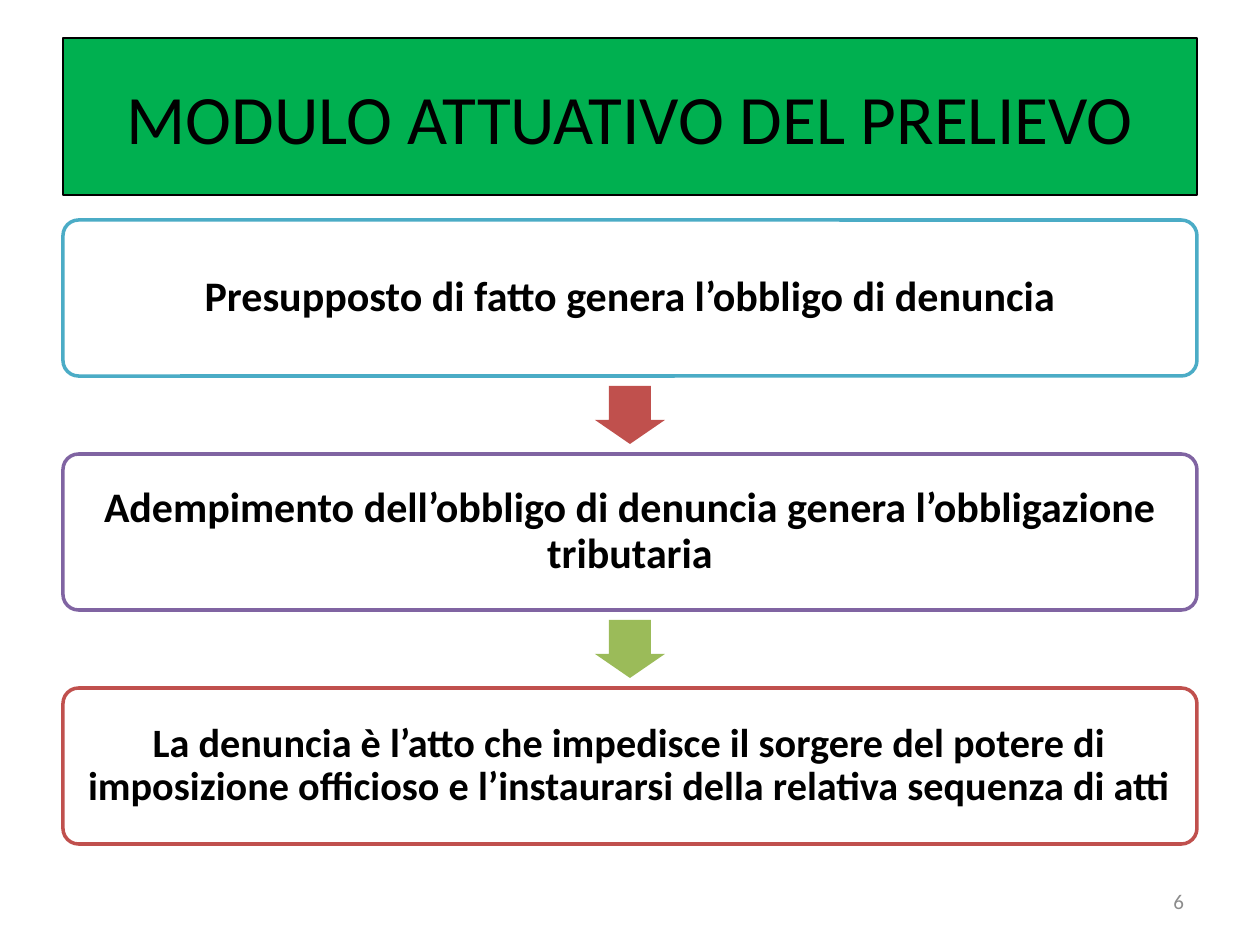
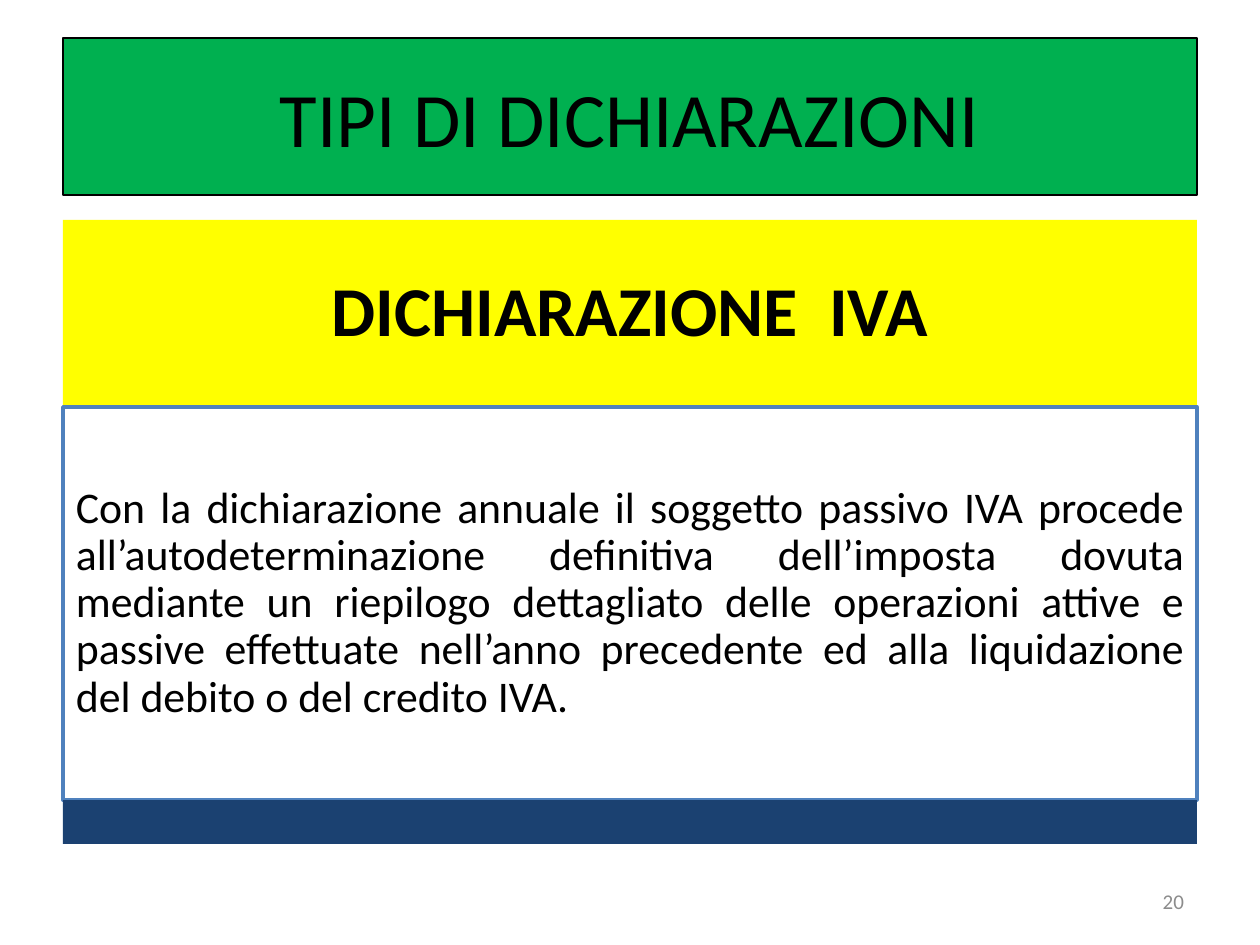
"""Builds two slides on tax declarations: a three-step flow and a definition panel."""
from dataclasses import dataclass
from typing import Optional

from pptx import Presentation
from pptx.dml.color import RGBColor
from pptx.enum.shapes import MSO_SHAPE
from pptx.enum.text import MSO_ANCHOR, MSO_AUTO_SIZE, PP_ALIGN
from pptx.presentation import Presentation as Deck
from pptx.shapes.autoshape import Shape
from pptx.slide import Slide
from pptx.util import Emu, Pt

RECT = MSO_SHAPE.RECTANGLE
ROUNDED = MSO_SHAPE.ROUNDED_RECTANGLE
DOWN_ARROW = MSO_SHAPE.DOWN_ARROW
MIDDLE = MSO_ANCHOR.MIDDLE
NO_AUTOFIT = MSO_AUTO_SIZE.NONE
CENTER = PP_ALIGN.CENTER
JUSTIFY = PP_ALIGN.JUSTIFY
RIGHT = PP_ALIGN.RIGHT

BLACK = RGBColor(0x00, 0x00, 0x00)
WHITE = RGBColor(0xFF, 0xFF, 0xFF)
GREY = RGBColor(0x8C, 0x8C, 0x8C)
GREEN = RGBColor(0x00, 0xB0, 0x50)
YELLOW = RGBColor(0xFF, 0xFF, 0x00)
BLUE = RGBColor(0x4F, 0x81, 0xBD)
NAVY = RGBColor(0x1B, 0x41, 0x71)
AQUA = RGBColor(0x4B, 0xAC, 0xC6)
PURPLE = RGBColor(0x80, 0x64, 0xA2)
RED = RGBColor(0xC0, 0x50, 0x4D)
OLIVE = RGBColor(0x9B, 0xBB, 0x59)

FONT = "Calibri"
PX_PER_INCH = 126
PAGE_WIDTH, PAGE_HEIGHT = 1260, 945
TITLE_ONLY = 5
MARGIN = 63
CONTENT_WIDTH = PAGE_WIDTH - 2 * MARGIN
CONTENT_TOP = 220
STEP_HEIGHT, STEP_GAP = 156, 78
ARROW_WIDTH, ARROW_HEIGHT = 70, 58


@dataclass(frozen=True)
class Area:
    """A rectangle in px."""
    left: int
    top: int
    width: int
    height: int


@dataclass(frozen=True)
class TextStyle:
    """The look of one paragraph and the inset of its frame in px."""
    size: float
    bold: bool = False
    color: RGBColor = BLACK
    align: PP_ALIGN = CENTER
    inset: int = 13
    line_spacing: float = 0.9


@dataclass(frozen=True)
class Step:
    """One box of the flow, with the colour of the arrow that follows it."""
    text: str
    size: int
    border: RGBColor
    arrow: Optional[RGBColor] = None


@dataclass(frozen=True)
class Panel:
    """One full-width band of a stacked list."""
    height: int
    fill: RGBColor
    border: Optional[RGBColor] = None
    text: str = ""
    style: Optional[TextStyle] = None


TITLE_AREA = Area(MARGIN, 38, CONTENT_WIDTH, 157)
NUMBER_AREA = Area(903, 876, 294, 50)
NUMBER_STYLE = TextStyle(12, color=GREY, align=RIGHT, line_spacing=1.0)

STEPS = (
    Step("Presupposto di fatto genera l’obbligo di denuncia", 24, AQUA, RED),
    Step("Adempimento dell’obbligo di denuncia genera l’obbligazione tributaria",
         24, PURPLE, OLIVE),
    Step("La denuncia è l’atto che impedisce il sorgere del potere di imposizione "
         "officioso e l’instaurarsi della relativa sequenza di atti", 23, RED),
)

PANELS = (
    Panel(187, YELLOW, text="DICHIARAZIONE  IVA",
          style=TextStyle(40, bold=True, inset=21)),
    Panel(393, WHITE, BLUE,
          "Con la dichiarazione annuale il soggetto passivo IVA procede "
          "all’autodeterminazione definitiva dell’imposta dovuta mediante un riepilogo "
          "dettagliato delle operazioni attive e passive effettuate nell’anno precedente "
          "ed alla liquidazione del debito o del credito IVA.",
          TextStyle(25, align=JUSTIFY)),
    Panel(44, NAVY),
)


def px(length: int) -> Emu:
    """Turns px into EMU."""
    return Emu(round(length * 914400 / PX_PER_INCH))


def write(box: Shape, text: str, style: TextStyle) -> None:
    """Writes one styled paragraph, centred vertically in the box."""
    frame = box.text_frame
    frame.word_wrap = True
    frame.auto_size = NO_AUTOFIT
    frame.vertical_anchor = MIDDLE
    frame.margin_left = frame.margin_right = px(style.inset)
    frame.margin_top = frame.margin_bottom = px(style.inset)
    para = frame.paragraphs[0]
    para.alignment = style.align
    para.line_spacing = style.line_spacing
    span = para.add_run()
    span.text = text
    span.font.name = FONT
    span.font.size = Pt(style.size)
    span.font.bold = style.bold
    span.font.color.rgb = style.color


def paint(box: Shape, fill: RGBColor, border: Optional[RGBColor] = None,
          weight: float = 2) -> None:
    """Sets a solid fill and an outline, or no outline."""
    box.fill.solid()
    box.fill.fore_color.rgb = fill
    if border is None:
        box.line.fill.background()
    else:
        box.line.color.rgb = border
        box.line.width = Pt(weight)


def add_box(page: Slide, kind: MSO_SHAPE, area: Area, fill: RGBColor,
            border: Optional[RGBColor] = None) -> Shape:
    """Adds a flat preset shape."""
    box = page.shapes.add_shape(kind, px(area.left), px(area.top),
                                px(area.width), px(area.height))
    box.shadow.inherit = False
    paint(box, fill, border)
    return box


def add_page(deck: Deck, title: str, title_size: float, number: int) -> Slide:
    """Adds a slide with the green title band and the page number."""
    page = deck.slides.add_slide(deck.slide_layouts[TITLE_ONLY])
    band = page.shapes.title
    band.left, band.top = px(TITLE_AREA.left), px(TITLE_AREA.top)
    band.width, band.height = px(TITLE_AREA.width), px(TITLE_AREA.height)
    paint(band, GREEN, BLACK, 1.5)
    write(band, title, TextStyle(title_size, line_spacing=1.0))
    footer = page.shapes.add_textbox(px(NUMBER_AREA.left), px(NUMBER_AREA.top),
                                     px(NUMBER_AREA.width), px(NUMBER_AREA.height))
    write(footer, str(number), NUMBER_STYLE)
    return page


def draw_flow(page: Slide, steps: tuple[Step, ...]) -> None:
    """Draws the steps from top to bottom with arrows centred in the gaps."""
    for index, step in enumerate(steps):
        top = CONTENT_TOP + index * (STEP_HEIGHT + STEP_GAP)
        area = Area(MARGIN, top, CONTENT_WIDTH, STEP_HEIGHT)
        box = add_box(page, ROUNDED, area, WHITE, step.border)
        box.adjustments[0] = 0.1
        write(box, step.text, TextStyle(step.size, bold=True))
        if step.arrow is not None:
            arrow_top = top + STEP_HEIGHT + (STEP_GAP - ARROW_HEIGHT) // 2
            arrow = add_box(page, DOWN_ARROW,
                            Area((PAGE_WIDTH - ARROW_WIDTH) // 2, arrow_top,
                                 ARROW_WIDTH, ARROW_HEIGHT), step.arrow)
            arrow.adjustments[0] = 0.6
            arrow.adjustments[1] = 0.5 * ARROW_HEIGHT / ARROW_WIDTH


def draw_panels(page: Slide, panels: tuple[Panel, ...]) -> None:
    """Stacks the panels without gaps."""
    top = CONTENT_TOP
    for panel in panels:
        area = Area(MARGIN, top, CONTENT_WIDTH, panel.height)
        box = add_box(page, RECT, area, panel.fill, panel.border)
        if panel.style is not None:
            write(box, panel.text, panel.style)
        top += panel.height


def main() -> None:
    """Builds and saves the deck."""
    deck = Presentation()
    deck.slide_width, deck.slide_height = px(PAGE_WIDTH), px(PAGE_HEIGHT)
    draw_flow(add_page(deck, "MODULO ATTUATIVO DEL PRELIEVO", 39.6, 6), STEPS)
    draw_panels(add_page(deck, "TIPI DI DICHIARAZIONI", 44, 20), PANELS)
    deck.save("out.pptx")


if __name__ == "__main__":
    main()
